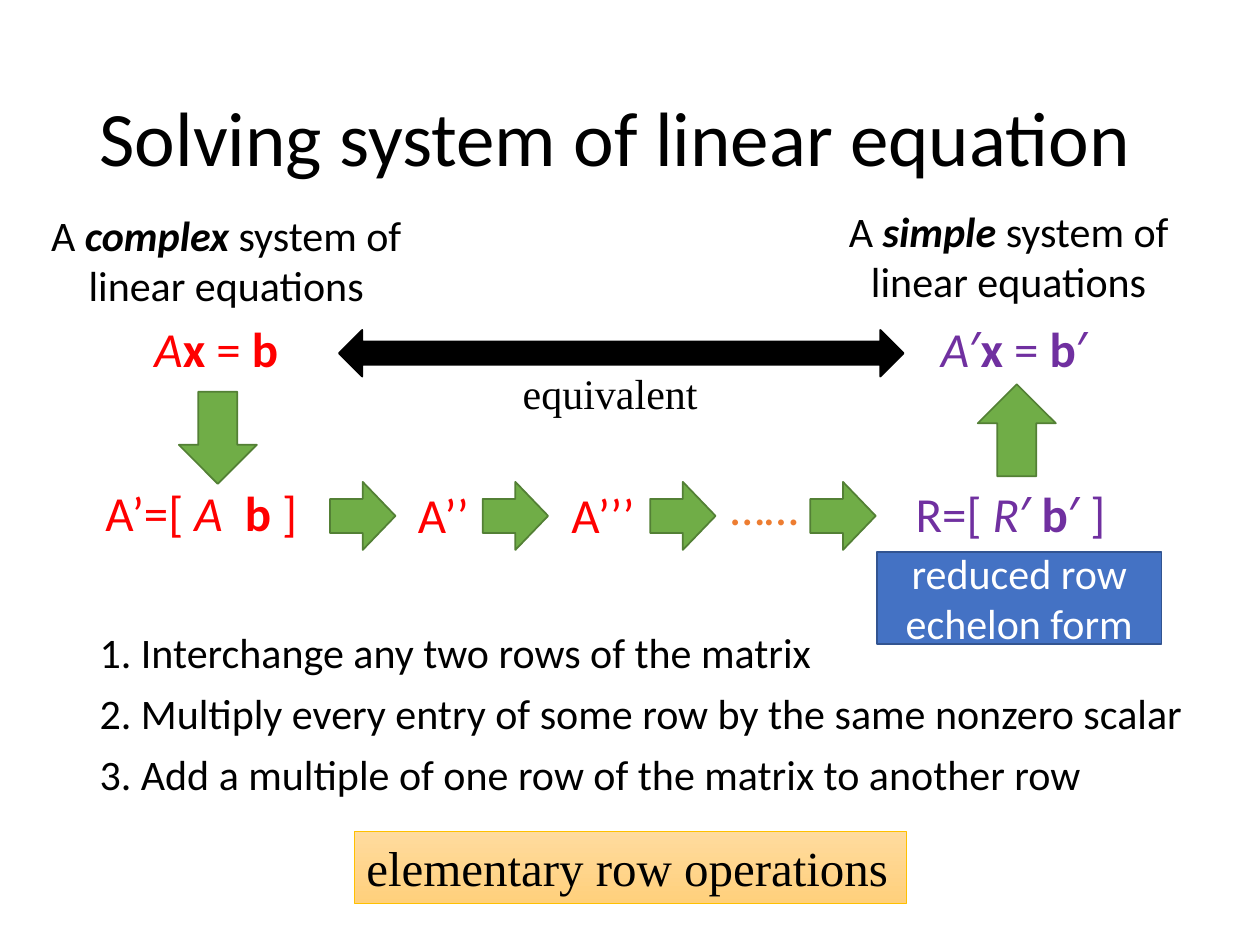
"""Build a slide on solving a system of linear equations by row operations."""
from pptx import Presentation
from pptx.dml.color import RGBColor
from pptx.enum.shapes import MSO_SHAPE
from pptx.enum.text import MSO_ANCHOR, MSO_AUTO_SIZE, PP_ALIGN
from pptx.oxml import parse_xml
from pptx.oxml.ns import nsdecls
from pptx.util import Pt

BLACK = RGBColor(0x00, 0x00, 0x00)
WHITE = RGBColor(0xFF, 0xFF, 0xFF)
RED = RGBColor(0xFF, 0x00, 0x00)
PURPLE = RGBColor(0x70, 0x30, 0xA0)
ORANGE = RGBColor(0xED, 0x7D, 0x31)
GREEN = RGBColor(0x70, 0xAD, 0x47)
MOSS = RGBColor(0x53, 0x80, 0x35)
BLUE = RGBColor(0x44, 0x72, 0xC4)
NAVY = RGBColor(0x32, 0x54, 0x91)
GOLD = RGBColor(0xFF, 0xC0, 0x00)
CREAM = RGBColor(0xFF, 0xDB, 0x9E)
AMBER = RGBColor(0xFF, 0xD0, 0x7C)
SANS, SERIF = "Calibri", "Times New Roman"

TITLE = "Solving system of linear equation"
STEPS = [
    "1. Interchange any two rows of the matrix",
    "2. Multiply every entry of some row by the same nonzero scalar",
    "3. Add a multiple of one row of the matrix to another row",
]
HEADS = [
    ((13.7, 115.9), [("A ", ""), ("complex", "bi"), (" system of linear equations", "")]),
    ((460.8, 113.8), [("A ", ""), ("simple ", "bi"), ("system of linear equations", "")]),
]
TERMS = [
    ((74.9, 178.6, 98.6), RED,
     [(" ", ""), ("A", "i"), ("x", "b"), (" = ", ""), ("b", "b")]),
    ((530.6, 178.6, 100), PURPLE,
     [("A", "i"), ("′", ""), ("x", "b"), (" = ", ""), ("b", "b"), ("′", "")]),
    ((46.8, 272.2, 139), RED,
     [(" A’=[ ", ""), ("A  ", "i"), ("b ", "b"), ("]", "")]),
    ((225.4, 273.6, 50.4), RED, [(" A’’", "")]),
    ((313.2, 273.6, 57.6), RED, [(" A’’’", "")]),
    ((410.4, 268.6, 55.4), ORANGE, [("……", "")]),
    ((516.2, 272.9, 125.3), PURPLE,
     [("R=[ ", ""), ("R", "i"), ("′ ", ""), ("b", "b"), ("′ ]", "")]),
]
TURNS = [
    (MSO_SHAPE.DOWN_ARROW, (102.2, 223.9, 44.6, 52.6)),
    (MSO_SHAPE.UP_ARROW, (558.7, 219.6, 44.6, 52.6)),
]
HOPS = [188.6, 275.8, 371.5, 463]


def apply(item, values):
    for key, value in values.items():
        setattr(item, key, value)


def write(par, runs, size, color, face=SANS):
    for text, style in runs:
        run = par.add_run()
        run.text = text
        apply(run.font, {"size": Pt(size), "name": face,
                         "bold": "b" in style, "italic": "i" in style})
        run.font.color.rgb = color


def place(item, box):
    names = ("left", "top", "width", "height")
    apply(item, dict(zip(names, map(Pt, box))))


def label(slide, box, runs, size, color, face=SANS, wrap=False):
    item = slide.shapes.add_textbox(*map(Pt, box))
    apply(item.text_frame, {"word_wrap": wrap,
                            "auto_size": MSO_AUTO_SIZE.SHAPE_TO_FIT_TEXT})
    par = item.text_frame.paragraphs[0]
    par.alignment = PP_ALIGN.CENTER if wrap else PP_ALIGN.LEFT
    write(par, runs, size, color, face)


def block(slide, kind, box, fill, edge, width=1):
    item = slide.shapes.add_shape(kind, *map(Pt, box))
    item.shadow.inherit = False
    if isinstance(fill, list):
        item.fill.gradient()
        item.fill.gradient_angle = 270
        for stop, color in zip(item.fill.gradient_stops, fill):
            stop.color.rgb = color
    else:
        item.fill.solid()
        item.fill.fore_color.rgb = fill
    item.line.color.rgb = edge
    item.line.width = Pt(width)
    return item


def fill_title(item):
    place(item, (49.7, 28.8, 620.6, 104.4))
    apply(item.text_frame, {"vertical_anchor": MSO_ANCHOR.MIDDLE, "word_wrap": True})
    par = item.text_frame.paragraphs[0]
    apply(par, {"alignment": PP_ALIGN.LEFT, "line_spacing": 0.9})
    write(par, [(TITLE, "")], 44, BLACK)


def fill_list(item):
    place(item, (49.7, 354.2, 655, 108))
    frame = item.text_frame
    for row, text in enumerate(STEPS):
        par = frame.add_paragraph() if row else frame.paragraphs[0]
        apply(par, {"space_before": Pt(0), "space_after": Pt(6.3)})
        props = par._p.get_or_add_pPr()
        props.set("marL", "0")
        props.set("indent", "0")
        props.append(parse_xml(f"<a:buNone {nsdecls('a')}/>"))
        write(par, [(text, "")], 24, BLACK)


def main():
    deck = Presentation()
    apply(deck, {"slide_width": Pt(720), "slide_height": Pt(540)})
    slide = deck.slides.add_slide(deck.slide_layouts[1])
    fill_title(slide.shapes.title)
    fill_list(slide.placeholders[1])

    for spot, runs in HEADS:
        label(slide, (*spot, 231.1, 65.5), runs, 24, BLACK, wrap=True)
    for spot, color, runs in TERMS:
        label(slide, (*spot, 41), runs, 28, color)
    label(slide, (291.6, 206.6, 114.5, 36), [("equivalent", "")], 24, BLACK, SERIF)

    for kind, box in TURNS:
        block(slide, kind, box, GREEN, MOSS)
    for left in HOPS:
        block(slide, MSO_SHAPE.RIGHT_ARROW, (left, 275.4, 37.4, 38.9), GREEN, MOSS)
    block(slide, MSO_SHAPE.LEFT_RIGHT_ARROW, (193.7, 188.6, 322.6, 26.6), BLACK, BLACK)

    form = block(slide, MSO_SHAPE.RECTANGLE, (501.1, 315.4, 162.7, 52.6), BLUE, NAVY)
    apply(form.text_frame, {"word_wrap": True, "vertical_anchor": MSO_ANCHOR.MIDDLE})
    par = form.text_frame.paragraphs[0]
    par.alignment = PP_ALIGN.CENTER
    write(par, [("reduced row echelon form", "")], 24, WHITE)

    banner = block(slide, MSO_SHAPE.RECTANGLE, (202.3, 475.2, 315.4, 41),
                   [CREAM, AMBER], GOLD, 0.5)
    apply(banner.text_frame, {"word_wrap": False, "vertical_anchor": MSO_ANCHOR.TOP})
    par = banner.text_frame.paragraphs[0]
    par.alignment = PP_ALIGN.LEFT
    write(par, [("elementary row operations", "")], 28, BLACK, SERIF)
    deck.save("out.pptx")


if __name__ == "__main__":
    main()
